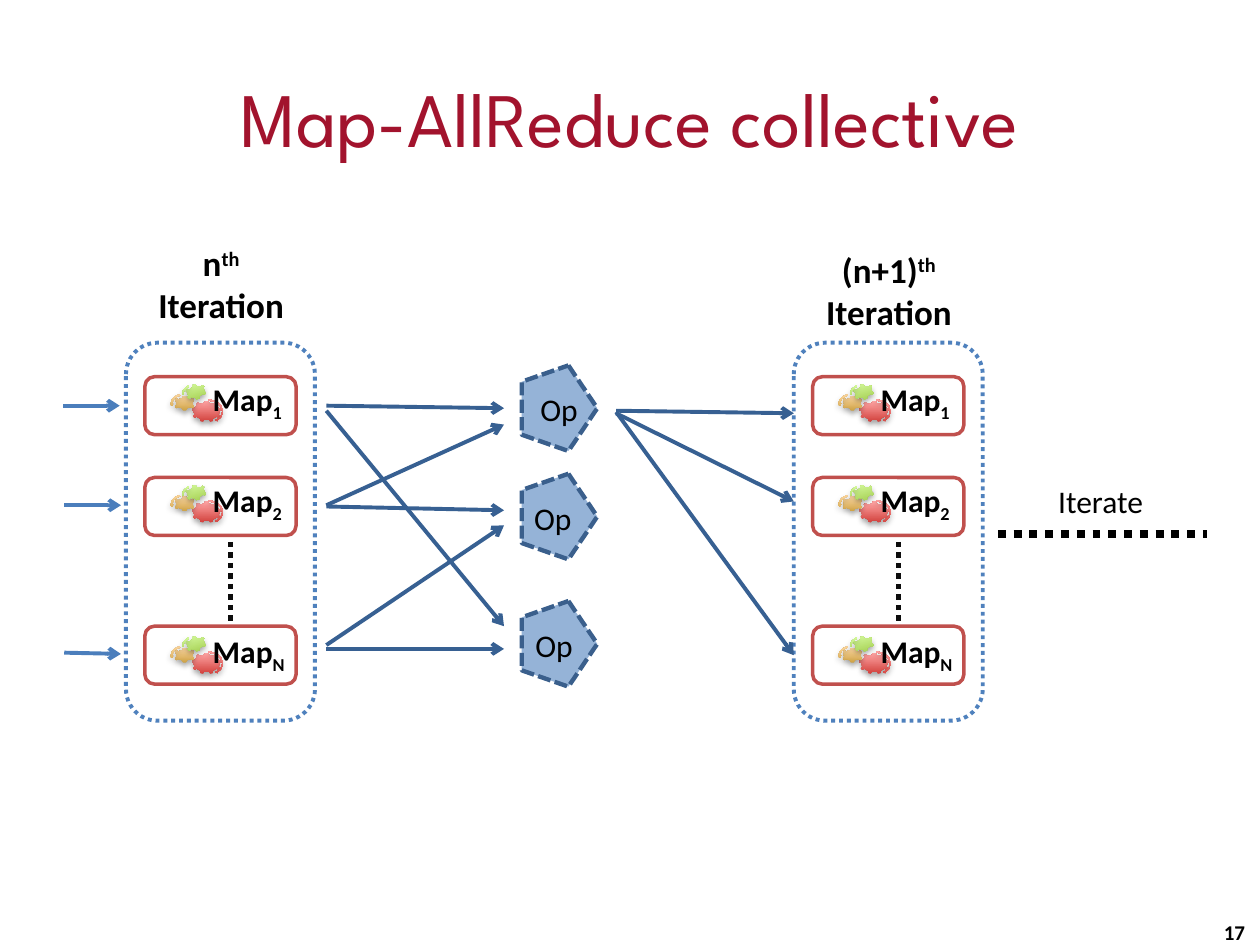
"""Build the Map-AllReduce collective slide."""
from lxml import etree
from pptx import Presentation
from pptx.dml.color import RGBColor
from pptx.enum.dml import MSO_LINE
from pptx.enum.shapes import MSO_CONNECTOR, MSO_SHAPE
from pptx.enum.text import MSO_ANCHOR, MSO_AUTO_SIZE, PP_ALIGN
from pptx.oxml.ns import qn
from pptx.util import Inches, Pt

STRAIGHT = MSO_CONNECTOR.STRAIGHT
ROUND, PENTAGON = MSO_SHAPE.ROUNDED_RECTANGLE, MSO_SHAPE.REGULAR_PENTAGON
GEAR6, GEAR9 = MSO_SHAPE.GEAR_6, MSO_SHAPE.GEAR_9
ARC, LEFT_ARC = MSO_SHAPE.CIRCULAR_ARROW, MSO_SHAPE.LEFT_CIRCULAR_ARROW
DOT, DASH = MSO_LINE.ROUND_DOT, MSO_LINE.SQUARE_DOT
LEFT, CENTER, RIGHT = PP_ALIGN.LEFT, PP_ALIGN.CENTER, PP_ALIGN.RIGHT
MIDDLE = MSO_ANCHOR.MIDDLE
FIT = MSO_AUTO_SIZE.SHAPE_TO_FIT_TEXT

RED, GOLD, GREEN = ("D1403C", "FFA6A5"), ("CDA143", "FFDAA5"), ("A0CA4A", "DAFFA5")
BLUE, PALE = "376092", "4B7EBC"

COLUMNS = [
    (1, 1.87, [[("n", 0), ("th", 30)], [("Iteration", 0)]]),
    (6.3, 1.92, [[("(n+1)", 0), ("th", 30)], [("Iteration", 0)]]),
]
MAPS = [("1", 2.99, 2.99), ("2", 3.79, 3.79), ("N", 4.97, 4.99)]
ICON = [
    (GEAR9, 0.37, 0.19, 0.24, 0.17, 0, RED, []),
    (GEAR6, 0.23, 0.15, 0.17, 0.12, 0, GOLD, []),
    (GEAR6, 0.32, 0.06, 0.17, 0.12, 345, GREEN, []),
    (ARC, 0.32, 0.17, 0.31, 0.21, 0, RED, [0.047, 2.99, 21.842, 173.459, 0.055]),
    (LEFT_ARC, 0.2, 0.13, 0.22, 0.16, 0, GOLD, [0.065, 4.3, 104.891, 148.378, 0.075]),
    (ARC, 0.29, 0.05, 0.24, 0.17, 0, GREEN, [0.06, 3.941, 133.138, 105.082, 0.07]),
]
OPS = [(2.94, 4.19, 3.05), (3.8, 4.14, 3.91), (4.81, 4.15, 4.92)]
INPUTS = [(0.5, 3.22, 0.95, 3.22), (0.51, 4.01, 0.96, 4.01), (0.51, 5.18, 0.96, 5.19)]
TO_OPS = [(3.22, 3.24), (3.26, 4.97), (4.02, 4.05), (5.12, 4.17), (4.01, 3.37), (5.15, 5.15)]
TO_MAPS = [(3.26, 3.28), (3.28, 3.98), (3.27, 5.2)]


def color(code):
    return RGBColor.from_string(code)


def box(parent, kind, at, fill, edge=None, width=0, dash=None):
    shape = parent.add_shape(kind, *map(Inches, at))
    shape.shadow.inherit = False
    if isinstance(fill, tuple):
        shape.fill.gradient()
        shape.fill.gradient_angle = 90
        for stop, code in zip(shape.fill.gradient_stops, fill):
            stop.color.rgb = color(code)
    else:
        shape.fill.solid()
        shape.fill.fore_color.rgb = color(fill)
    if edge:
        shape.line.color.rgb = color(edge)
        shape.line.width = Pt(width)
        shape.line.dash_style = dash
    else:
        shape.line.fill.background()
    return shape


def shade(shape):
    effects = shape._element.spPr.find(qn("a:effectLst"))
    outer = etree.SubElement(effects, qn("a:outerShdw"), blurRad=str(Pt(3.1)),
                             dist=str(Pt(1.8)), dir="5400000", rotWithShape="0")
    tint = etree.SubElement(outer, qn("a:srgbClr"), val="000000")
    etree.SubElement(tint, qn("a:alpha"), val="35000")


def link(parent, ends, code, width=2.25, dash=None, arrow=True):
    line = parent.add_connector(STRAIGHT, *map(Inches, ends))
    line.line.color.rgb = color(code)
    line.line.width = Pt(width)
    if dash:
        line.line.dash_style = dash
    if arrow:
        etree.SubElement(line.line._get_or_add_ln(), qn("a:tailEnd"), type="arrow")
    etree.SubElement(line._element.spPr, qn("a:effectLst"))


def label(parent, at, rows, size=18, bold=False, align=LEFT,
          font="Calibri", code="000000", fixed=False):
    frame = parent.add_textbox(*map(Inches, at)).text_frame
    frame.word_wrap = fixed
    if fixed:
        frame.vertical_anchor = MIDDLE
    else:
        frame.auto_size = FIT
    for i, row in enumerate(rows):
        para = frame.add_paragraph() if i else frame.paragraphs[0]
        para.alignment = align
        for text, shift in row:
            run = para.add_run()
            run.text = text
            run.font.name, run.font.size, run.font.bold = font, Pt(size), bold
            run.font.color.rgb = color(code)
            if shift:
                run._r.get_or_add_rPr().set("baseline", str(shift * 1000))


def column(shapes, left, top, head):
    label(shapes, (left + 0.15, top, 1.21, 0.77), head, 20, True, CENTER)
    box(shapes, ROUND, (left, 2.72, 1.5, 3), "FFFFFF", "4F81BD", 2.25, DOT)
    x = left + 0.15
    for name, y, base in MAPS:
        group = shapes.add_group_shape().shapes
        box(group, ROUND, (x, y, 1.2, 0.46), "FFFFFF", "C0504D", 2)
        for kind, dx, dy, w, h, turn, fill, bends in ICON:
            part = box(group, kind, (x + dx, base + dy, w, h), fill)
            part.rotation = turn
            for i, bend in enumerate(bends):
                part.adjustments[i] = bend
            shade(part)
        label(group, (x + 0.44, base - 0.02, 0.77, 0.4),
              [[("Map", 0), (name, -25)]], bold=True)
    link(shapes, (left + 0.83, 4.3, left + 0.83, 4.96), "0D0D0D", 3, DOT, False)


def main():
    deck = Presentation()
    deck.slide_width, deck.slide_height = Inches(10), Inches(7.5)
    shapes = deck.slides.add_slide(deck.slide_layouts[6]).shapes
    label(shapes, (0.5, 0.3, 9, 1.25), [[("Map-AllReduce collective", 0)]], 44,
          align=CENTER, font="League Spartan", code="A2132D", fixed=True)
    for left, top, head in COLUMNS:
        column(shapes, left, top, head)
    for ends in INPUTS:
        link(shapes, ends, PALE)
    for start, pairs in ((2.59, TO_OPS), (4.89, TO_MAPS)):
        for y, end in pairs:
            link(shapes, (start, y, start + 1.41, end), BLUE)
    for y, x, top in OPS:
        box(shapes, PENTAGON, (4.1, y, 0.68, 0.6), "95B3D7", "3A5F8C", 2.5, DASH).rotation = 90
        label(shapes, (x, top, 0.5, 0.4), [[("Op", 0)]])
    label(shapes, (8.3, 3.78, 0.88, 0.4), [[("Iterate", 0)]])
    link(shapes, (7.92, 4.24, 9.58, 4.24), "000000", 4.5, DOT, False)
    label(shapes, (7.65, 7.2, 2.33, 0.4), [[("17", 0)]], 12, True, RIGHT, fixed=True)
    deck.save("out.pptx")


if __name__ == "__main__":
    main()
